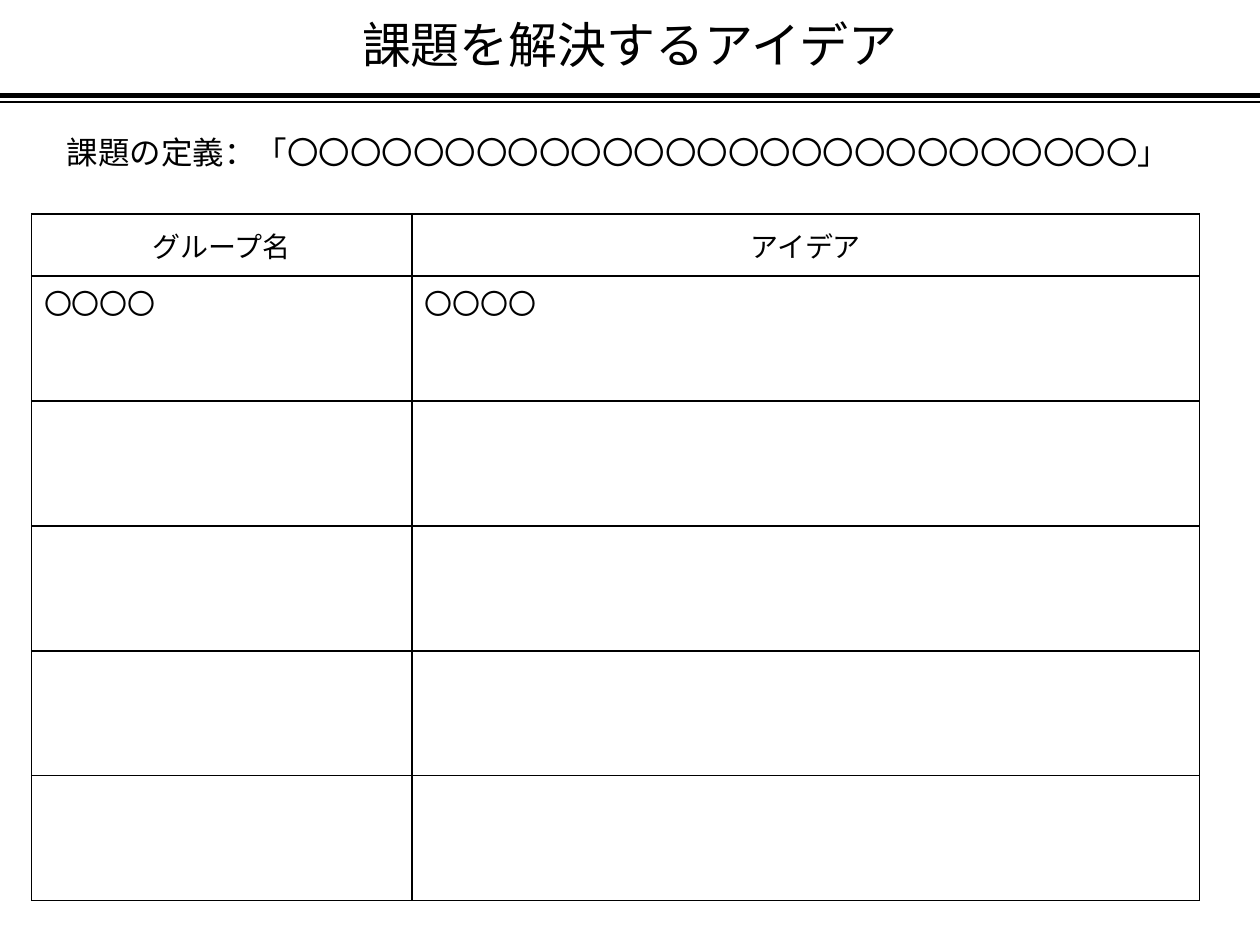
from lxml.etree import SubElement
from pptx import Presentation
from pptx.dml.color import RGBColor
from pptx.enum.shapes import MSO_CONNECTOR
from pptx.enum.text import MSO_ANCHOR, MSO_AUTO_SIZE, PP_ALIGN
from pptx.oxml.ns import qn
from pptx.util import Inches, Pt

COLORS = {"ink": "000000", "paper": "FFFFFF"}
FONT = "Noto Sans CJK JP"
SLIDE_WIDTH, SLIDE_HEIGHT = 10, 7.5
HEADERS = ["グループ名", "アイデア"]
IDEAS = [["〇〇〇〇", "〇〇〇〇"]] + [["", ""]] * 4
COLUMN_SHARES = [0.326, 0.674]
HEADER_HEIGHT = 0.49


def color(name):
    return RGBColor.from_string(COLORS[name])


def write(text_frame, text, size, alignment=PP_ALIGN.LEFT):
    """Add one formatted run and return its paragraph."""
    paragraph = text_frame.paragraphs[0]
    paragraph.alignment = alignment
    run = paragraph.add_run()
    run.text = text
    run.font.size = Pt(size)
    run.font.color.rgb = color("ink")
    run.font.name = FONT
    SubElement(run.font._element, qn("a:ea"), typeface=FONT)
    return paragraph


def place(shape, box):
    shape.left, shape.top, shape.width, shape.height = map(Inches, box)


def add_rule(slide, left, top, width, weight):
    line = slide.shapes.add_connector(
        MSO_CONNECTOR.STRAIGHT, Inches(left), Inches(top), Inches(left + width), Inches(top))
    line.line.color.rgb = color("ink")
    line.line.width = Pt(weight)
    SubElement(line._element.spPr, qn("a:effectLst"))


def add_heading(slide, box):
    """Title with a thick and a thin rule beneath it."""
    left, top, width, height = box
    title = slide.shapes.title
    place(title, box)
    frame = title.text_frame
    frame.auto_size = MSO_AUTO_SIZE.NONE
    frame.vertical_anchor = MSO_ANCHOR.MIDDLE
    write(frame, "課題を解決するアイデア", 28, PP_ALIGN.CENTER).line_spacing = 0.9
    for offset, weight in ((0, 3), (0.05, 1)):
        add_rule(slide, left, top + height + offset, width, weight)


def add_definition(slide, box):
    frame = slide.shapes.add_textbox(*map(Inches, box)).text_frame
    frame.word_wrap = False
    frame.auto_size = MSO_AUTO_SIZE.SHAPE_TO_FIT_TEXT
    write(frame, f"課題の定義：「{'〇' * 27}」", 18)


def style_cell(cell):
    """Thin border on every side, no fill."""
    properties = cell._tc.get_or_add_tcPr()
    for side in ("a:lnL", "a:lnR", "a:lnT", "a:lnB"):
        border = SubElement(properties, qn(side), w=str(Pt(1)))
        fill = SubElement(border, qn("a:solidFill"))
        SubElement(fill, qn("a:srgbClr"), val=COLORS["ink"])
    cell.fill.background()


def add_idea_table(slide, box):
    width, height = box[2:]
    rows = [HEADERS] + IDEAS
    table = slide.shapes.add_table(len(rows), len(HEADERS), *map(Inches, box)).table
    table.first_row = table.horz_banding = False
    for column, share in zip(table.columns, COLUMN_SHARES):
        column.width = Inches(width * share)
    for index, row in enumerate(table.rows):
        is_header = index == 0
        row.height = Inches(HEADER_HEIGHT if is_header else (height - HEADER_HEIGHT) / len(IDEAS))
        for cell, text in zip(row.cells, rows[index]):
            style_cell(cell)
            cell.vertical_anchor = MSO_ANCHOR.MIDDLE if is_header else MSO_ANCHOR.TOP
            if text:
                write(cell.text_frame, text, 16, PP_ALIGN.CENTER if is_header else PP_ALIGN.LEFT)


def main():
    presentation = Presentation()
    presentation.slide_width = Inches(SLIDE_WIDTH)
    presentation.slide_height = Inches(SLIDE_HEIGHT)
    slide = presentation.slides.add_slide(presentation.slide_layouts[5])
    slide.background.fill.solid()
    slide.background.fill.fore_color.rgb = color("paper")
    add_heading(slide, (0, 0, SLIDE_WIDTH, 0.76))
    add_idea_table(slide, (0.25, 1.7, 9.27, 5.45))
    add_definition(slide, (0.43, 1.01, 9.29, 0.4))
    presentation.save("out.pptx")


if __name__ == "__main__":
    main()
